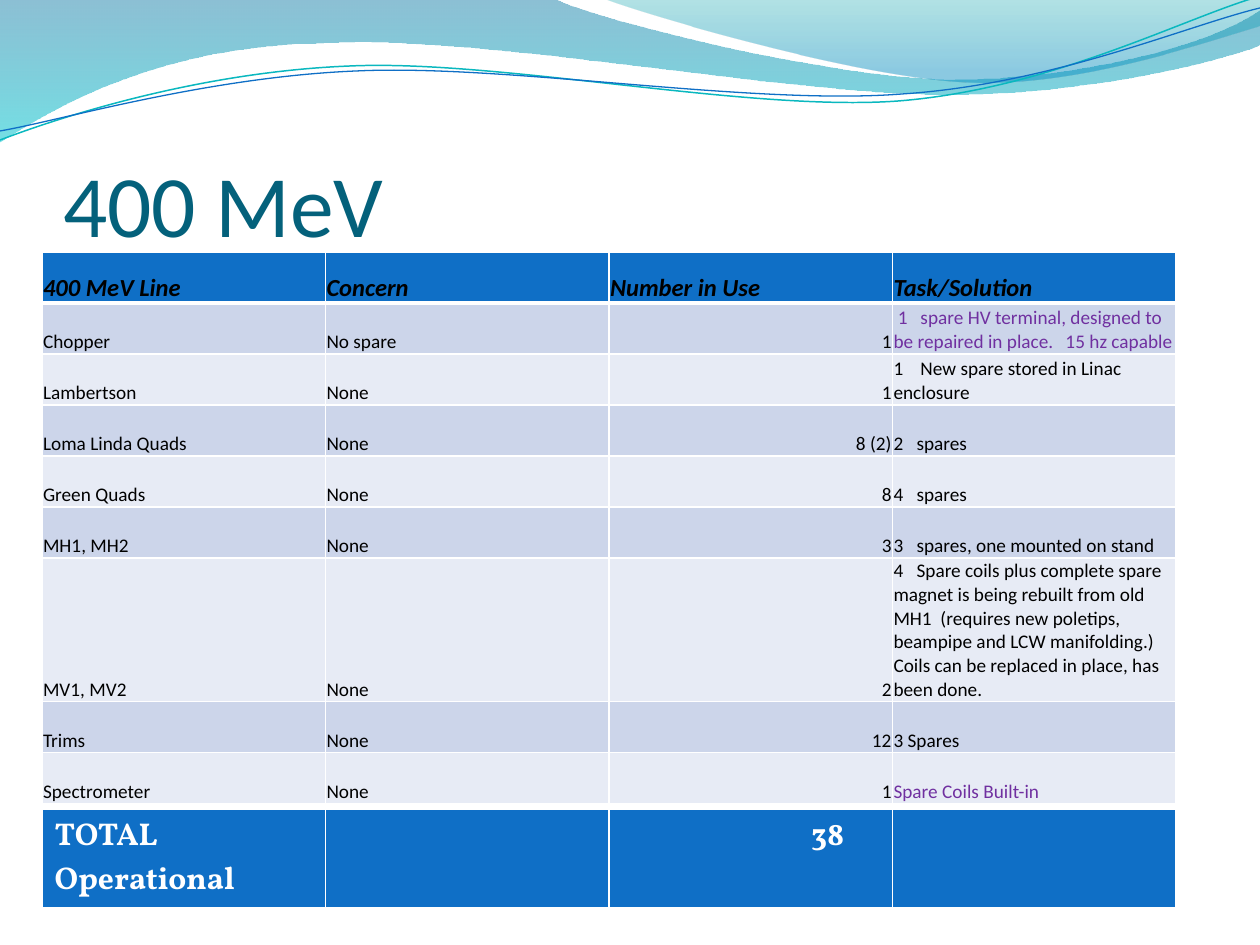
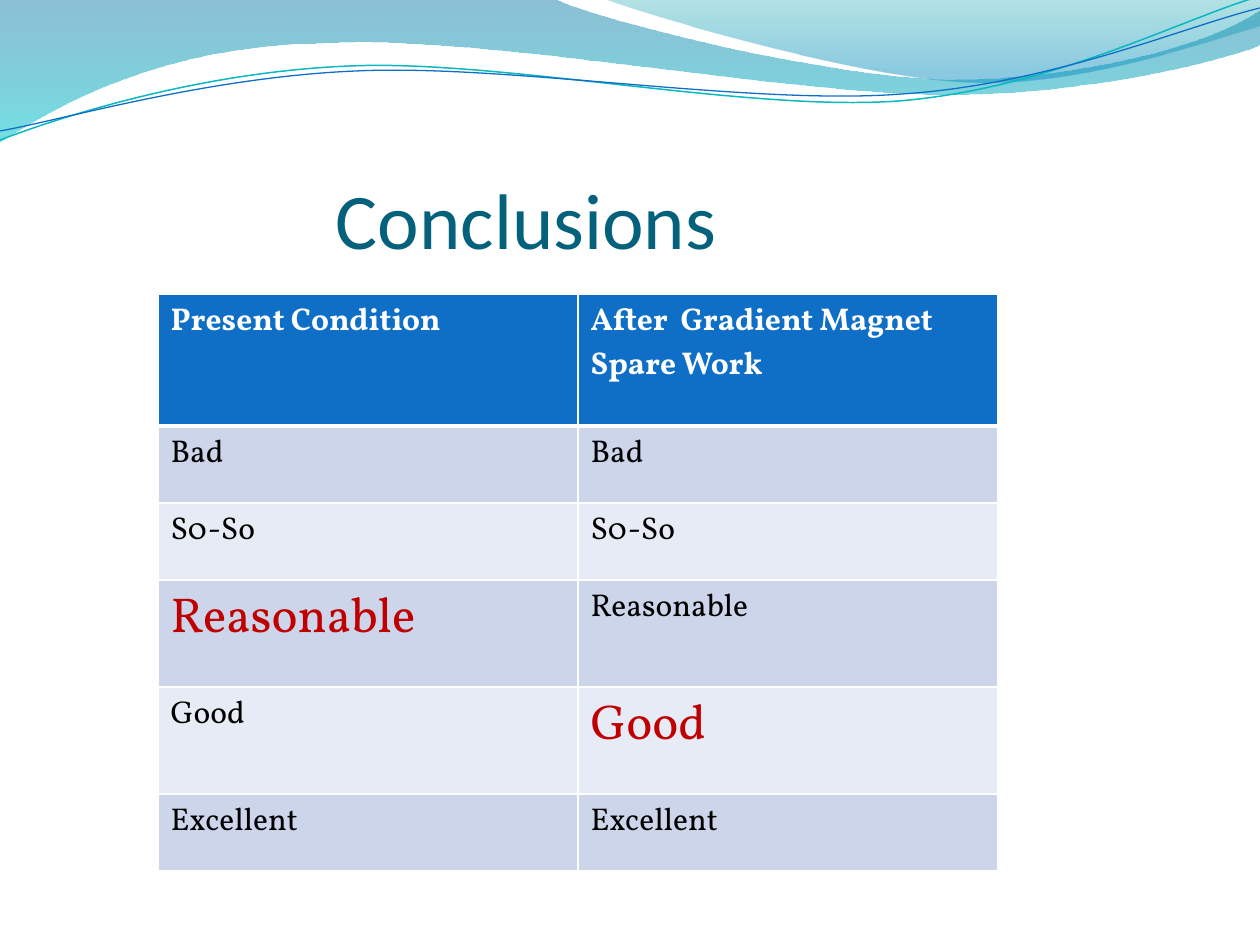
from dataclasses import dataclass
from itertools import chain

from lxml.etree import SubElement
from pptx import Presentation
from pptx.dml.color import RGBColor
from pptx.enum.text import MSO_ANCHOR as Anchor, MSO_AUTO_SIZE as AutoSize, PP_ALIGN as Align
from pptx.oxml import parse_xml
from pptx.oxml.ns import nsdecls, qn
from pptx.util import Emu, Pt

PX = 914400 / 126
TITLE_ONLY = 5

WHITE = RGBColor(0xFF, 0xFF, 0xFF)
BLACK = RGBColor(0x00, 0x00, 0x00)
TITLE_TEAL = RGBColor(0x04, 0x61, 0x7B)
HEADER_BLUE = RGBColor(0x0F, 0x6F, 0xC6)
LINE_TEAL = RGBColor(0x0A, 0xB8, 0xBF)
BAND_DARK = RGBColor(0xCC, 0xD5, 0xEA)
BAND_LIGHT = RGBColor(0xE7, 0xEB, 0xF5)
PURPLE = RGBColor(0x70, 0x30, 0xA0)
RED = RGBColor(0xC0, 0x00, 0x00)
WAVE_BLUE = RGBColor(0x00, 0x74, 0xA1)
WAVE_CYAN = RGBColor(0x00, 0xC6, 0xCF)
CREST_GREEN = RGBColor(0x00, 0xA1, 0xA9)
CREST_BLUE = RGBColor(0x00, 0x8B, 0xBF)

SANS = "Calibri"
SERIF = "Vollkorn"

WAVE = [
    (0, 0), [(554, -1)],
    [(600, 21), (837, 79), (955, 79)], [(1075, 79), (1207, 47), (1260, 11)],
    [(1261, 45)],
    [(1239, 55), (1096, 96), (940, 94)], [(784, 94), (481, 35), (324, 43)],
    [(163, 45), (58, 105), (-1, 142)],
]
CREST = [
    (604, -1),
    [(641, 14), (859, 78), (969, 82)], [(1079, 87), (1211, 40), (1260, 26)],
    [(1260, 0)],
]
TEAL_LINE = [
    (0, 140),
    [(60, 117), (199, 72), (349, 66)], [(498, 59), (747, 112), (898, 101)],
    [(1050, 89), (1182, 19), (1257, -3)],
]
BLUE_LINE = [
    (0, 131),
    [(59, 121), (207, 77), (357, 71)], [(508, 64), (752, 106), (903, 94)],
    [(1053, 84), (1186, 26), (1260, 8)],
]

SPARES = [
    ("400 MeV Line", "Concern", "Number in Use", "Task/Solution"),
    ("Chopper", "No spare", "1",
     " 1\tspare HV terminal, designed to be repaired in place.\t15 hz capable"),
    ("Lambertson", "None", "1", "1\tNew spare stored in Linac enclosure"),
    ("Loma Linda Quads", "None", "8 (2)", "2\tspares"),
    ("Green Quads", "None", "8", "4\tspares"),
    ("MH1, MH2", "None", "3", "3\tspares, one mounted on stand"),
    ("MV1, MV2", "None", "2",
     "4\tSpare coils plus complete spare magnet is being rebuilt from old MH1  "
     "(requires new poletips, beampipe and LCW manifolding.)  "
     "Coils can be replaced in place, has been done."),
    ("Trims", "None", "12", "3 Spares"),
    ("Spectrometer", "None", "1", "Spare Coils Built-in"),
]
TOTAL = [("TOTAL  Operational", "", "38", "")]
GRADES = ["Bad", "S0-So", "Reasonable", "Good", "Excellent"]
CONDITIONS = [("Present Condition", "After  Gradient Magnet  Spare Work")]
CONDITIONS += [(grade, grade) for grade in GRADES]


def px(length):
    return Emu(round(length * PX))


@dataclass
class TextLook:
    font: str
    size: int
    color: RGBColor = BLACK
    bold: bool = False
    italic: bool = False

    def apply(self, paragraph):
        font = paragraph.font
        font.name, font.size = self.font, Pt(self.size)
        font.bold, font.italic = self.bold, self.italic
        font.color.rgb = self.color


SPARES_HEAD = TextLook(SANS, 14, bold=True, italic=True)
SPARES_BODY = TextLook(SANS, 11)
SPARES_NOTE = TextLook(SANS, 11, PURPLE)
SERIF_HEAD = TextLook(SERIF, 18, WHITE, bold=True)
SERIF_BODY = TextLook(SERIF, 18)
SERIF_RATING = TextLook(SERIF, 28, RED)


class SlideMaker:
    def __init__(self):
        self.deck = Presentation()
        self.deck.slide_width, self.deck.slide_height = px(1260), px(945)
        self.layout = self.deck.slide_layouts[TITLE_ONLY]
        for holder in list(self.layout.placeholders)[1:]:
            self.layout.shapes.element.remove(holder.element)
        self.page = None

    def add_page(self, title, size, left, top, width, height):
        self.page = self.deck.slides.add_slide(self.layout)
        box = self.page.shapes.title
        box.left, box.top, box.width, box.height = map(px, (left, top, width, height))
        frame = box.text_frame
        frame.auto_size = AutoSize.NONE
        frame.word_wrap = True
        frame.vertical_anchor = Anchor.BOTTOM
        frame.margin_left = frame.margin_right = frame.margin_bottom = 0
        frame.margin_top = px(6)
        frame.text = title
        para = frame.paragraphs[0]
        para.alignment = Align.LEFT
        TextLook(SANS, size, TITLE_TEAL).apply(para)

    def freeform(self, outline, closed):
        start, *segments = outline
        builder = self.page.shapes.build_freeform(*start, scale=PX)
        builder.add_line_segments(list(chain(*segments)), close=closed)
        shape = builder.convert_to_shape()
        shape.shadow.inherit = False
        lines = iter(list(shape.element.iter(qn("a:lnTo"))))
        for segment in segments:
            group = [next(lines) for _ in segment]
            if len(group) == 3:
                self.bend(group)
        return shape

    def bend(self, lines):
        curve = parse_xml(f'<a:cubicBezTo {nsdecls("a")}/>')
        lines[0].addprevious(curve)
        for line in lines:
            curve.append(line[0])
            line.getparent().remove(line)

    def wave(self, outline, stops):
        shape = self.freeform(outline, True)
        shape.line.fill.background()
        shape.fill.gradient()
        shape.fill.gradient_angle = 270
        for stop, (position, color, _) in zip(shape.fill.gradient_stops, stops):
            stop.position = position
            stop.color.rgb = color
        for node, (_, _, opacity) in zip(shape.element.iter(qn("a:srgbClr")), stops):
            SubElement(node, qn("a:alpha")).set("val", str(opacity * 1000))
        return shape

    def ripple(self, outline, color, width):
        shape = self.freeform(outline, False)
        shape.fill.background()
        shape.line.color.rgb = color
        shape.line.width = Pt(width)
        return shape

    def add_banner_to_layout(self):
        banner = [
            self.wave(WAVE, [(0, WAVE_BLUE, 45), (1, WAVE_CYAN, 55)]),
            self.wave(CREST, [(0, CREST_GREEN, 30), (0.8, CREST_BLUE, 45)]),
            self.ripple(TEAL_LINE, LINE_TEAL, 0.85),
            self.ripple(BLUE_LINE, HEADER_BLUE, 0.75),
        ]
        for order, shape in enumerate(banner):
            shape.element.nvSpPr.cNvPr.id = 20 + order
            self.layout.shapes.element.insert(2 + order, shape.element)

    def borders(self, cell, bottom):
        properties = cell._tc.get_or_add_tcPr()
        for order, (side, width) in enumerate(zip("LRTB", (1, 1, 1, bottom))):
            properties.insert(order, parse_xml(
                f'<a:ln{side} {nsdecls("a")} w="{Pt(width)}"><a:solidFill>'
                f'<a:srgbClr val="{WHITE}"/></a:solidFill></a:ln{side}>'))

    def table(self, left, top, width, row_heights, rows, head, body):
        columns = len(rows[0])
        table = self.page.shapes.add_table(
            len(rows), columns, px(left), px(top),
            px(width), px(sum(row_heights))).table
        table.first_row = table.horz_banding = False
        for column in table.columns:
            column.width = px(width / columns)
        for index, (row, height, texts) in enumerate(zip(table.rows, row_heights, rows)):
            row.height = px(height)
            band = BAND_DARK if index % 2 else BAND_LIGHT
            for cell, text in zip(row.cells, texts):
                cell.fill.solid()
                cell.fill.fore_color.rgb = band if index else HEADER_BLUE
                self.borders(cell, 1 if index else 3)
                cell.text = text
                (body if index else head).apply(cell.text_frame.paragraphs[0])
        return table

    def restyle(self, table, row, column, look):
        look.apply(table.cell(row, column).text_frame.paragraphs[0])

    def tab_stops(self, para, positions):
        stops = "".join(f'<a:tab pos="{px(position)}" algn="l"/>' for position in positions)
        properties = para._p.get_or_add_pPr()
        properties.insert(0, parse_xml(f'<a:tabLst {nsdecls("a")}>{stops}</a:tabLst>'))

    def tighten(self, table):
        for cell in table.iter_cells():
            cell.vertical_anchor = Anchor.BOTTOM
            cell.margin_left = cell.margin_right = cell.margin_top = px(1)
            cell.margin_bottom = 0


def build_spares_page(maker):
    maker.add_page("400 MeV", 50, 63, 97, 1134, 158)
    maker.add_banner_to_layout()
    heights = [51] * len(SPARES)
    spares = maker.table(42, 252, 1134, heights, SPARES, SPARES_HEAD, SPARES_BODY)
    maker.tighten(spares)
    for row in range(1, len(SPARES)):
        spares.cell(row, 2).text_frame.paragraphs[0].alignment = Align.RIGHT
        if "\t" in SPARES[row][3]:
            para = spares.cell(row, 3).text_frame.paragraphs[0]
            maker.tab_stops(para, (27 if row < 3 else 23, 172))
    for row in (1, 8):
        maker.restyle(spares, row, 3, SPARES_NOTE)
    total = maker.table(42, 809, 1134, [57], TOTAL, SERIF_HEAD, SERIF_BODY)
    total.cell(0, 2).margin_left = px(202)


def build_conclusions_page(maker):
    maker.add_page("Conclusions", 45, 336, 158, 451, 107)
    heights = [132, 77, 77, 107, 107, 77]
    ratings = maker.table(158, 294, 840, heights, CONDITIONS, SERIF_HEAD, SERIF_BODY)
    for row, column in ((3, 0), (4, 1)):
        maker.restyle(ratings, row, column, SERIF_RATING)


def main():
    maker = SlideMaker()
    build_spares_page(maker)
    build_conclusions_page(maker)
    maker.deck.save("out.pptx")


if __name__ == "__main__":
    main()
